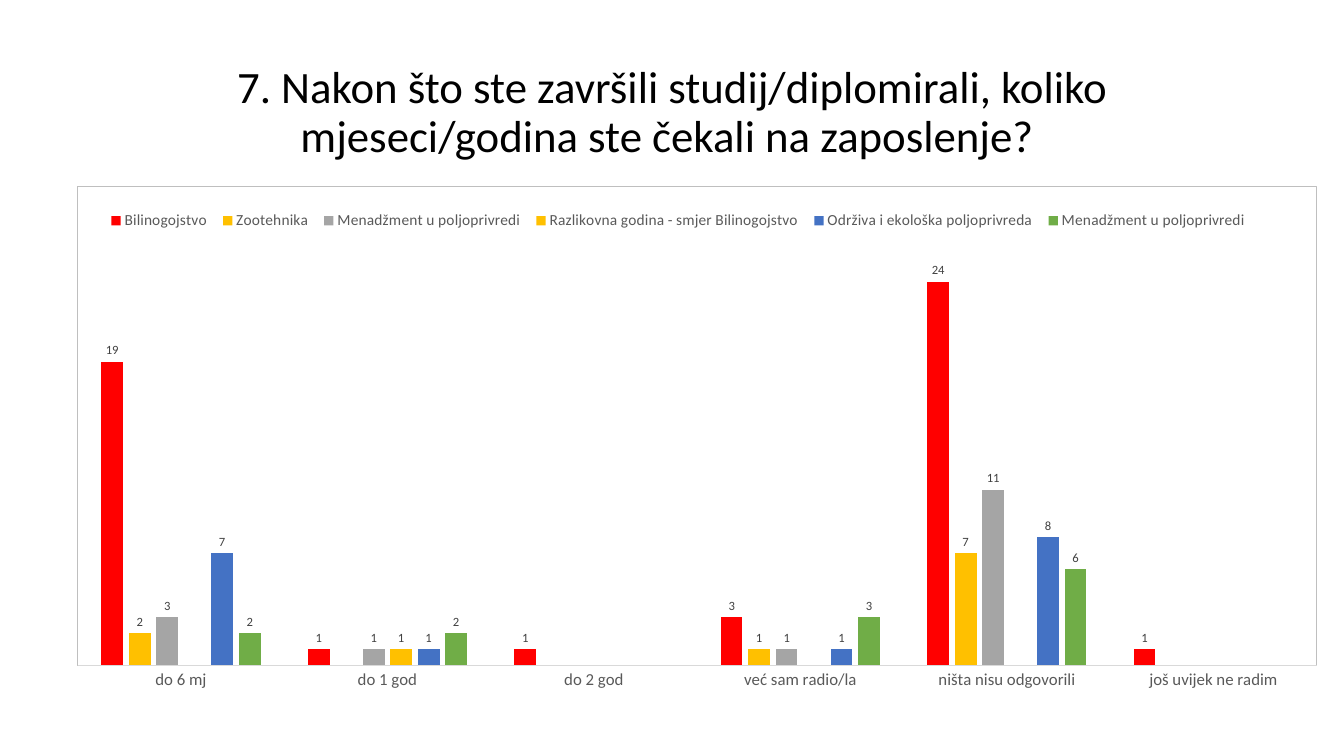
from lxml import etree
from pptx import Presentation, util as u
from pptx.chart.data import CategoryChartData
from pptx.dml.color import RGBColor
from pptx.enum import chart as ch, text
from pptx.oxml import parse_xml
from pptx.oxml.ns import nsdecls, qn


def style_font(font, size, color):
    values = {"name": "Calibri", "size": u.Pt(size), "bold": False}
    for key, value in values.items():
        setattr(font, key, value)
    font.color.rgb = RGBColor.from_string(color)


def set_layout(parent, index, box, inner=False):
    for old in parent.findall(qn("c:layout")):
        parent.remove(old)
    layout = etree.Element(qn("c:layout"))
    manual = etree.SubElement(layout, qn("c:manualLayout"))
    entries = [("layoutTarget", "inner")] if inner else []
    entries += [("xMode", "edge"), ("yMode", "edge")]
    entries += zip("xywh", map(str, box))
    for tag, value in entries:
        etree.SubElement(manual, qn("c:" + tag)).set("val", value)
    parent.insert(index, layout)


presentation = Presentation()
presentation.slide_width = u.Inches(13.33)
presentation.slide_height = u.Inches(7.5)
slide = presentation.slides.add_slide(presentation.slide_layouts[5])

title = slide.shapes.title
title_box = {"left": 0.92, "top": 0.4, "width": 11.5, "height": 1.45}
for key, value in title_box.items():
    setattr(title, key, u.Inches(value))
title_format = {
    "word_wrap": True,
    "auto_size": text.MSO_AUTO_SIZE.NONE,
    "vertical_anchor": text.MSO_ANCHOR.MIDDLE,
}
for key, value in title_format.items():
    setattr(title.text_frame, key, value)
paragraph = title.text_frame.paragraphs[0]
paragraph.alignment = text.PP_ALIGN.CENTER
paragraph.line_spacing = 0.9
run = paragraph.add_run()
run.text = "7. Nakon što ste završili studij/diplomirali, koliko mjeseci/godina ste čekali na zaposlenje? "
style_font(run.font, 32, "000000")

series_rows = [
    ("Bilinogojstvo", [19, 1, 1, 3, 24, 1], "FF0000"),
    ("Zootehnika", [2, None, None, 1, 7, None], "FFC000"),
    ("Menadžment u poljoprivredi", [3, 1, None, 1, 11, None], "A5A5A5"),
    ("Razlikovna godina - smjer Bilinogojstvo", [None, 1, None, None, None, None], "FFC000"),
    ("Održiva i ekološka poljoprivreda", [7, 1, None, 1, 8, None], "4472C4"),
    ("Menadžment u poljoprivredi", [2, 2, None, 3, 6, None], "70AD47"),
]
chart_data = CategoryChartData()
chart_data.categories = [
    "do 6 mj", "do 1 god", "do 2 god",
    "već sam radio/la", "ništa nisu odgovorili", "još uvijek ne radim",
]
for name, values, color in series_rows:
    chart_data.add_series(name, values)

chart = slide.shapes.add_chart(
    ch.XL_CHART_TYPE.COLUMN_CLUSTERED,
    u.Inches(0.62), u.Inches(1.69), u.Inches(12.59), u.Inches(5.55),
    chart_data,
).chart
chart.has_title = False
style_font(chart.font, 10, "000000")

plot = chart.plots[0]
plot_format = {"gap_width": 219, "overlap": -27, "vary_by_categories": False}
for key, value in plot_format.items():
    setattr(plot, key, value)

for series, (name, values, color) in zip(plot.series, series_rows):
    series.invert_if_negative = False
    series.format.fill.solid()
    series.format.fill.fore_color.rgb = RGBColor.from_string(color)
    labels = series.data_labels
    labels.show_value = True
    labels.position = ch.XL_LABEL_POSITION.OUTSIDE_END
    style_font(labels.font, 9, "404040")

category_axis = chart.category_axis
category_axis.major_tick_mark = ch.XL_TICK_MARK.NONE
category_axis.format.line.color.rgb = RGBColor.from_string("D9D9D9")
category_axis.format.line.width = u.Pt(0.75)
style_font(category_axis.tick_labels.font, 12, "595959")

value_format = {
    "minimum_scale": 0, "maximum_scale": 30,
    "has_major_gridlines": False, "visible": False,
}
for key, value in value_format.items():
    setattr(chart.value_axis, key, value)

chart.has_legend = True
legend = chart.legend
legend.position = ch.XL_LEGEND_POSITION.BOTTOM
legend.include_in_layout = False
style_font(legend.font, 11, "595959")

chart_root = chart.element
set_layout(chart_root.find(".//" + qn("c:legend")), 1, (0.03, 0.06, 0.91, 0.06))
plot_area = chart_root.find(".//" + qn("c:plotArea"))
set_layout(plot_area, 0, (0.012, 0.028, 0.976, 0.857), inner=True)
plot_area.append(parse_xml(
    f'<c:spPr {nsdecls("c", "a")}><a:noFill/><a:ln w="9525"><a:solidFill>'
    '<a:srgbClr val="BFBFBF"/></a:solidFill></a:ln></c:spPr>'
))

presentation.save("out.pptx")
